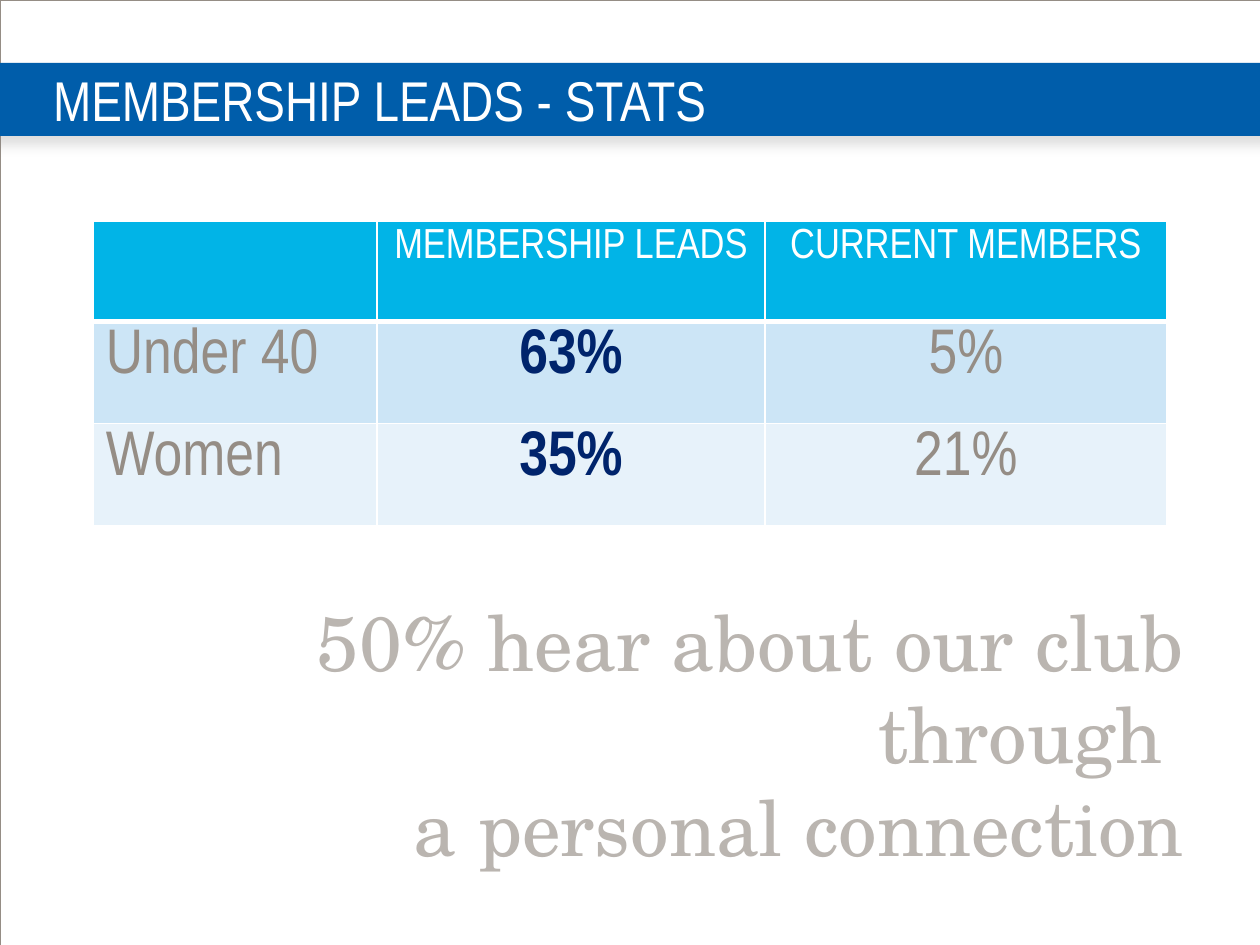
from dataclasses import dataclass

from lxml import etree
from pptx import Presentation
from pptx.dml.color import RGBColor
from pptx.enum.shapes import MSO_SHAPE
from pptx.enum.text import MSO_ANCHOR, PP_ALIGN
from pptx.oxml.ns import qn
from pptx.util import Cm, Pt

RECTANGLE = MSO_SHAPE.RECTANGLE
TOP, MIDDLE = MSO_ANCHOR.TOP, MSO_ANCHOR.MIDDLE
LEFT, CENTER, RIGHT = PP_ALIGN.LEFT, PP_ALIGN.CENTER, PP_ALIGN.RIGHT

COLORS = {
    "white": "FFFFFF",
    "banner": "005DAA",
    "shadow": "808080",
    "header": "01B4E7",
    "band_dark": "CCE5F6",
    "band_light": "E7F2FA",
    "grey": "958D85",
    "pale_grey": "BAB5B0",
    "navy": "00246C",
}
SANS, SERIF = "Arial Narrow", "TeX Gyre Schola"

PAGE_WIDTH, PAGE_HEIGHT = 25.4, 19.05
BANNER_TOP, BANNER_HEIGHT = 1.27, 1.47
COLUMN_WIDTHS = (5.72, 7.82, 8.1)
ROW_HEIGHTS = (2.01, 2.06, 2.06)


@dataclass
class Style:
    size: float
    color: str
    name: str = SANS
    bold: bool = False
    align: PP_ALIGN = LEFT


@dataclass
class Area:
    left: float
    top: float
    width: float
    height: float

    def lengths(self) -> tuple:
        return Cm(self.left), Cm(self.top), Cm(self.width), Cm(self.height)


@dataclass
class Row:
    texts: tuple
    styles: tuple
    fill: str
    bottom_border: float = 1


TITLE = Style(32, "white")
MESSAGE = Style(44, "pale_grey", SERIF, align=RIGHT)
HEADING = Style(24, "white", align=CENTER)
LABEL = Style(36, "grey")
LEAD = Style(36, "navy", bold=True, align=CENTER)
CURRENT = Style(36, "grey", align=CENTER)

ROWS = (
    Row(("", "MEMBERSHIP LEADS", "CURRENT MEMBERS"), (HEADING,) * 3, "header", 3),
    Row(("Under 40", "63%", "5%"), (LABEL, LEAD, CURRENT), "band_dark"),
    Row(("Women", "35%", "21%"), (LABEL, LEAD, CURRENT), "band_light"),
)


def rgb(color: str) -> RGBColor:
    return RGBColor.from_string(COLORS[color])


def write(frame, text: str, style: Style) -> None:
    para = frame.paragraphs[0]
    para.text = text
    para.alignment = style.align
    formats = {"size": Pt(style.size), "name": style.name, "bold": style.bold}
    for span in para.runs:
        for key, value in formats.items():
            setattr(span.font, key, value)
        span.font.color.rgb = rgb(style.color)


def add_text(page, area: Area, text: str, style: Style, **formats) -> None:
    frame = page.shapes.add_textbox(*area.lengths()).text_frame
    frame.word_wrap = True
    for key, value in formats.items():
        setattr(frame, key, value)
    write(frame, text, style)


def add_color(parent, color: str):
    return etree.SubElement(parent, qn("a:srgbClr"), val=COLORS[color])


def add_frame(page) -> None:
    box = page.shapes.add_shape(RECTANGLE, *Area(0, 0, PAGE_WIDTH, PAGE_HEIGHT).lengths())
    box.shadow.inherit = False
    box.fill.background()
    box.line.color.rgb = rgb("grey")
    box.line.width = Pt(0.13)


def add_banner(page) -> None:
    area = Area(-0.2, BANNER_TOP, PAGE_WIDTH + 0.43, BANNER_HEIGHT)
    box = page.shapes.add_shape(RECTANGLE, *area.lengths())
    box.shadow.inherit = False
    box.fill.solid()
    box.fill.fore_color.rgb = rgb("banner")
    box.line.fill.background()
    effects = box.element.spPr.find(qn("a:effectLst"))
    shadow = etree.SubElement(
        effects, qn("a:outerShdw"), blurRad=str(Pt(7)), dist=str(Pt(4.8)),
        dir="5400000", algn="t", rotWithShape="0",
    )
    etree.SubElement(add_color(shadow, "shadow"), qn("a:alpha"), val="25000")


def set_borders(cell, bottom: float) -> None:
    properties = cell._tc.get_or_add_tcPr()
    for side, width in {"L": 1, "R": 1, "T": 1, "B": bottom}.items():
        border = etree.SubElement(properties, qn(f"a:ln{side}"), w=str(Pt(width)))
        add_color(etree.SubElement(border, qn("a:solidFill")), "white")


def add_stats(page) -> None:
    area = Area(1.88, 4.47, sum(COLUMN_WIDTHS), sum(ROW_HEIGHTS))
    table = page.shapes.add_table(len(ROWS), len(COLUMN_WIDTHS), *area.lengths()).table
    for column, width in zip(table.columns, COLUMN_WIDTHS):
        column.width = Cm(width)
    for line, height, row in zip(table.rows, ROW_HEIGHTS, ROWS):
        line.height = Cm(height)
        for cell, text, style in zip(line.cells, row.texts, row.styles):
            set_borders(cell, row.bottom_border)
            cell.fill.solid()
            cell.fill.fore_color.rgb = rgb(row.fill)
            write(cell.text_frame, text, style)


def main() -> None:
    deck = Presentation()
    deck.slide_width, deck.slide_height = Cm(PAGE_WIDTH), Cm(PAGE_HEIGHT)
    page = deck.slides.add_slide(deck.slide_layouts[6])
    add_frame(page)
    add_banner(page)
    add_text(
        page, Area(1.07, BANNER_TOP, 24.33, BANNER_HEIGHT),
        "MEMBERSHIP LEADS - STATS", TITLE, vertical_anchor=MIDDLE,
        margin_left=0, margin_top=0, margin_right=0, margin_bottom=0,
    )
    add_text(
        page, Area(1.27, 11.86, 22.86, 4.65),
        "50% hear about our club through \va personal connection", MESSAGE,
        vertical_anchor=TOP,
    )
    add_stats(page)
    deck.save("out.pptx")


if __name__ == "__main__":
    main()
